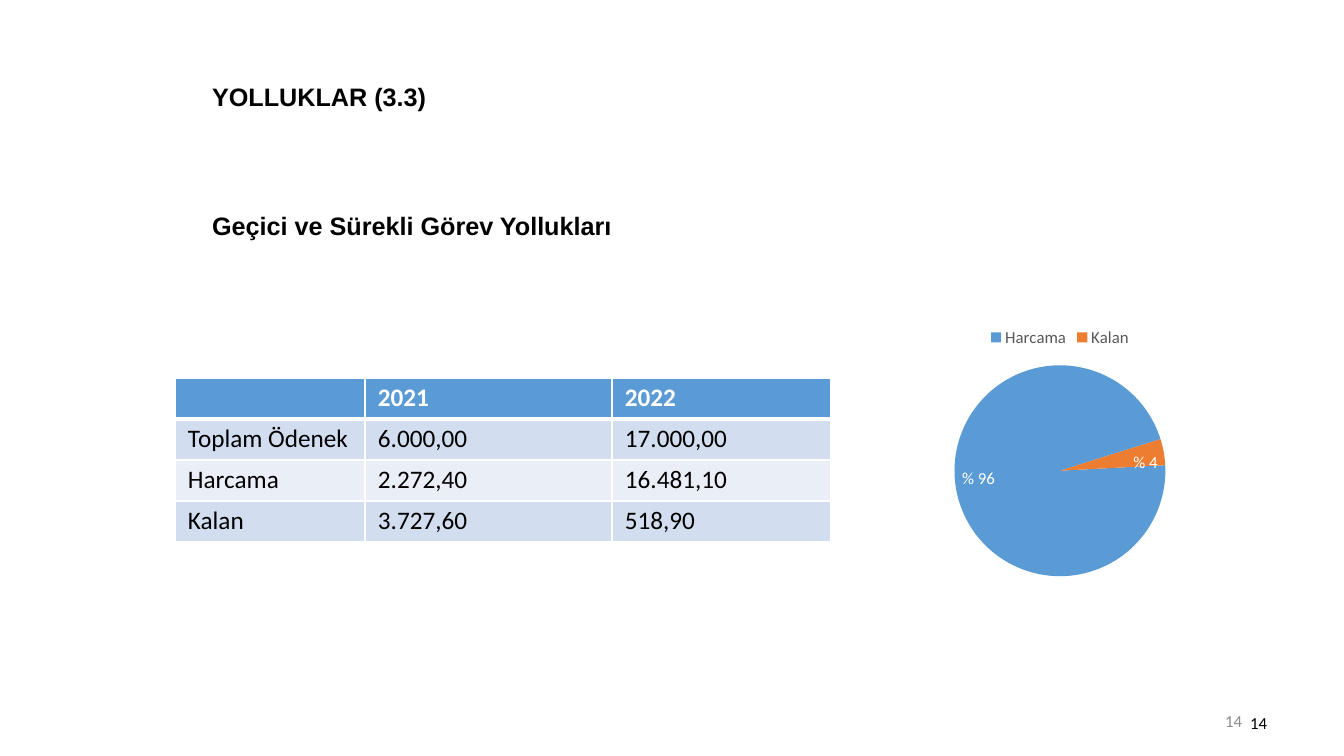
import lxml.etree
import pptx
import pptx.chart.data
import pptx.dml.color
import pptx.enum.chart
import pptx.enum.text
import pptx.oxml
import pptx.oxml.ns
import pptx.util

RGBColor = pptx.dml.color.RGBColor
BLACK = RGBColor(0x00, 0x00, 0x00)
WHITE = RGBColor(0xFF, 0xFF, 0xFF)
GRAY = RGBColor(0x8C, 0x8C, 0x8C)
LEGEND_GRAY = RGBColor(0x59, 0x59, 0x59)
BLUE = RGBColor(0x5B, 0x9B, 0xD5)
ORANGE = RGBColor(0xED, 0x7D, 0x31)
BAND_DARK = RGBColor(0xD2, 0xDE, 0xEF)
BAND_LIGHT = RGBColor(0xEA, 0xEF, 0xF7)

EMU_PER_PX = 914400 / 100.8
ANCHOR = pptx.enum.text.MSO_ANCHOR
ALIGN = pptx.enum.text.PP_ALIGN

BUDGET_ROWS = [
    ("", "2021", "2022"),
    ("Toplam Ödenek", "6.000,00", "17.000,00"),
    ("Harcama", "2.272,40", "16.481,10"),
    ("Kalan", "3.727,60", "518,90"),
]
COLUMN_WIDTHS = (190, 247, 219)
ROW_HEIGHT = 41


def px(length):
    return pptx.util.Emu(round(length * EMU_PER_PX))


def style_font(font, size, color, bold=False, name="Calibri"):
    font.name = name
    font.size = pptx.util.Pt(size)
    font.bold = bold
    font.color.rgb = color


def write_text(frame, text, size=12, color=BLACK, bold=False, name="Calibri",
               align=ALIGN.LEFT, anchor=ANCHOR.TOP, gap=0):
    frame.word_wrap = True
    frame.vertical_anchor = anchor
    frame.text = text
    for index, para in enumerate(frame.paragraphs):
        para.alignment = align
        para.line_spacing = 1.0
        para.space_before = pptx.util.Pt(gap if index else 0)
        for span in para.runs:
            style_font(span.font, size, color, bold, name)


def set_title(page, text, left, top, width, height):
    title = page.shapes.title
    title.left, title.top = px(left), px(top)
    title.width, title.height = px(width), px(height)
    write_text(title.text_frame, text, size=18, bold=True, name="Arial", gap=71)
    title.text_frame.auto_size = pptx.enum.text.MSO_AUTO_SIZE.NONE


def add_page_number(page, text, left, top, width, height, color, anchor):
    box = page.shapes.add_textbox(px(left), px(top), px(width), px(height))
    write_text(box.text_frame, text, color=color, align=ALIGN.RIGHT, anchor=anchor)


def set_borders(cell, bottom):
    properties = cell._tc.get_or_add_tcPr()
    widths = {"lnL": 1, "lnR": 1, "lnT": 1, "lnB": bottom}
    for position, (side, width) in enumerate(widths.items()):
        line = pptx.oxml.parse_xml(
            f'<a:{side} {pptx.oxml.ns.nsdecls("a")} w="{pptx.util.Pt(width)}">'
            f'<a:solidFill><a:srgbClr val="{WHITE}"/></a:solidFill></a:{side}>')
        properties.insert(position, line)


def add_budget_table(page, left, top):
    frame = page.shapes.add_table(
        len(BUDGET_ROWS), len(COLUMN_WIDTHS), px(left), px(top),
        px(sum(COLUMN_WIDTHS)), px(ROW_HEIGHT * len(BUDGET_ROWS)))
    table = frame.table
    for column, width in zip(table.columns, COLUMN_WIDTHS):
        column.width = px(width)
    for row_index, values in enumerate(BUDGET_ROWS):
        header = row_index == 0
        band = BAND_DARK if row_index % 2 else BAND_LIGHT
        for column_index, value in enumerate(values):
            cell = table.cell(row_index, column_index)
            cell.margin_left = cell.margin_right = px(13)
            cell.margin_top = cell.margin_bottom = px(5)
            cell.fill.solid()
            cell.fill.fore_color.rgb = BLUE if header else band
            write_text(cell.text_frame, value, size=18, bold=header,
                       color=WHITE if header else BLACK)
            set_borders(cell, bottom=3 if header else 1)


def place_plot(chart, **fractions):
    plot_area = chart._chartSpace.chart.plotArea
    tag = pptx.oxml.ns.qn
    for layout in plot_area.findall(tag("c:layout")):
        plot_area.remove(layout)
    layout = lxml.etree.Element(tag("c:layout"))
    manual = lxml.etree.SubElement(layout, tag("c:manualLayout"))
    settings = {"layoutTarget": "inner", "xMode": "edge", "yMode": "edge", **fractions}
    for name, value in settings.items():
        lxml.etree.SubElement(manual, tag(f"c:{name}")).set("val", str(value))
    plot_area.insert(0, layout)


def add_spending_pie(page, left, top, width, height):
    data = pptx.chart.data.CategoryChartData()
    data.categories = ["Harcama", "Kalan"]
    data.add_series("Series 1", (96, 4))
    chart = page.shapes.add_chart(
        pptx.enum.chart.XL_CHART_TYPE.PIE,
        px(left), px(top), px(width), px(height), data).chart
    style_font(chart.font, 10, BLACK)
    chart.has_title = False
    chart.has_legend = True
    chart.legend.position = pptx.enum.chart.XL_LEGEND_POSITION.TOP
    chart.legend.include_in_layout = False
    style_font(chart.legend.font, 12, LEGEND_GRAY)

    plot = chart.plots[0]
    plot.vary_by_categories = True
    for index, color in enumerate((BLUE, ORANGE)):
        fill = plot.series[0].points[index].format.fill
        fill.solid()
        fill.fore_color.rgb = color
    labels = plot.series[0].data_labels
    labels.show_value = True
    labels.show_percentage = False
    labels.number_format = '"% "0'
    labels.number_format_is_linked = False
    labels.position = pptx.enum.chart.XL_LABEL_POSITION.INSIDE_END
    style_font(labels.font, 12, WHITE)

    pie = chart._chartSpace.chart.plotArea.find(pptx.oxml.ns.qn("c:pieChart"))
    for angle in pie.findall(pptx.oxml.ns.qn("c:firstSliceAng")):
        pie.remove(angle)
    lxml.etree.SubElement(pie, pptx.oxml.ns.qn("c:firstSliceAng")).set("val", "87")
    place_plot(chart, x=0.24, y=0.18, w=0.52, h=0.77)


def main():
    deck = pptx.Presentation()
    deck.slide_width, deck.slide_height = px(1344), px(756)
    page = deck.slides.add_slide(deck.slide_layouts[5])
    add_page_number(page, "14", 950, 701, 302, 40, GRAY, ANCHOR.MIDDLE)
    add_page_number(page, "14", 964, 688, 313, 50, BLACK, ANCHOR.BOTTOM)
    set_title(page, "YOLLUKLAR (3.3)\nGeçici ve Sürekli Görev Yollukları",
              202, 76, 1005, 178)
    add_budget_table(page, 175, 378)
    add_spending_pie(page, 856, 316, 408, 274)
    deck.save("out.pptx")


if __name__ == "__main__":
    main()
